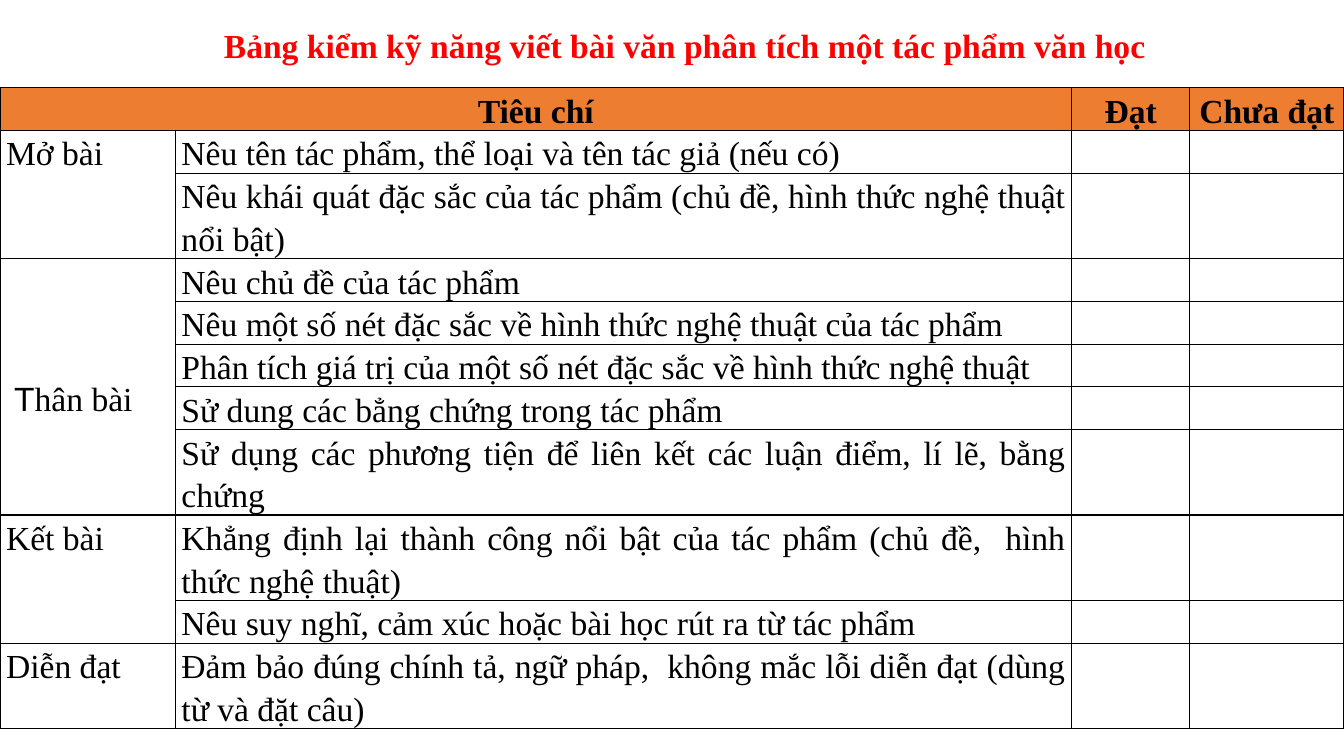
from dataclasses import dataclass

from lxml.etree import SubElement
from pptx import Presentation
from pptx.dml.color import RGBColor
from pptx.enum.text import MSO_ANCHOR, PP_ALIGN
from pptx.oxml.ns import qn
from pptx.util import Inches, Pt


@dataclass(frozen=True)
class Theme:
    """Colours, fonts and sizes of the slide."""
    title: RGBColor = RGBColor(0xFF, 0, 0)
    ink: RGBColor = RGBColor(0, 0, 0)
    header: RGBColor = RGBColor(0xED, 0x7D, 0x31)
    font: str = "Times New Roman"
    initial_font: str = "Arial"
    size: Pt = Pt(24)
    line_spacing: float = 1.15
    border: Pt = Pt(1)


THEME = Theme()
WIDTH, HEIGHT = 13.33, 7.5
LINE = 0.42
COLUMNS = [1.74, 8.89, 1.17, 1.53]
TITLE = "Bảng kiểm kỹ năng viết bài văn phân tích một tác phẩm văn học"
SECTIONS = [
    ("Mở bài", [
        ("Nêu tên tác phẩm, thể loại và tên tác giả (nếu có)", 1),
        ("Nêu khái quát đặc sắc của tác phẩm (chủ đề, hình thức nghệ thuật nổi bật)", 2),
    ]),
    ("Thân bài", [
        ("Nêu chủ đề của tác phẩm", 1),
        ("Nêu một số nét đặc sắc về hình thức nghệ thuật của tác phẩm", 1),
        ("Phân tích giá trị của một số nét đặc sắc về hình thức nghệ thuật", 1),
        ("Sử dung các bẳng chứng trong tác phẩm", 1),
        ("Sử dụng các phương tiện để liên kết các luận điểm, lí lẽ, bằng chứng", 2),
    ]),
    ("Kết bài", [
        ("Khẳng định lại thành công nổi bật của tác phẩm (chủ đề,  hình thức nghệ thuật)", 2),
        ("Nêu suy nghĩ, cảm xúc hoặc bài học rút ra từ tác phẩm", 1),
    ]),
    ("Diễn đạt", [
        ("Đảm bảo đúng chính tả, ngữ pháp,  không mắc lỗi diễn đạt (dùng từ và đặt câu)", 2),
    ]),
]


def write(frame, spans, align=PP_ALIGN.LEFT, bold=False, color=THEME.ink):
    """Write one paragraph of spans in the theme's type."""
    para = frame.paragraphs[0]
    para.alignment = align
    para.line_spacing = THEME.line_spacing
    para.font.name, para.font.size = THEME.font, THEME.size
    para.font.bold, para.font.color.rgb = bold, color
    for text in spans:
        para.add_run().text = text
    return para


def prepare_cell(cell, is_header):
    """Give a cell its margins, black borders and fill."""
    cell.margin_left = cell.margin_right = Inches(0.06)
    cell.margin_top = cell.margin_bottom = 0
    properties = cell._tc.get_or_add_tcPr()
    for side in ("lnL", "lnR", "lnT", "lnB"):
        line = SubElement(properties, qn(f"a:{side}"), w=str(THEME.border))
        fill = SubElement(line, qn("a:solidFill"))
        SubElement(fill, qn("a:srgbClr"), val=str(THEME.ink))
    if is_header:
        cell.fill.solid()
        cell.fill.fore_color.rgb = THEME.header
    else:
        cell.fill.background()


def add_title(page, left, top, width, height):
    """Place the centred red title."""
    box = page.shapes.add_textbox(*map(Inches, (left, top, width, height)))
    box.text_frame.word_wrap = True
    box.text_frame.margin_left = Inches(0.35)
    write(box.text_frame, [TITLE], PP_ALIGN.CENTER, True, THEME.title)


def add_checklist(page, left, top, width):
    """Place the checklist table with its merged section labels."""
    lines = [1] + [count for _, items in SECTIONS for _, count in items]
    table = page.shapes.add_table(
        len(lines), len(COLUMNS), Inches(left), Inches(top),
        Inches(width), Inches(LINE * sum(lines))).table
    table.first_row = table.horz_banding = False
    for column, share in zip(table.columns, COLUMNS):
        column.width = Inches(width * share / sum(COLUMNS))
    for index, (row, count) in enumerate(zip(table.rows, lines)):
        row.height = Inches(LINE * count)
        for cell in row.cells:
            prepare_cell(cell, index == 0)

    table.cell(0, 0).merge(table.cell(0, 1))
    for column, text in ((0, "Tiêu chí"), (2, "Đạt"), (3, "Chưa đạt")):
        write(table.cell(0, column).text_frame, [text], PP_ALIGN.CENTER, True)

    first = 1
    for label, items in SECTIONS:
        heading = table.cell(first, 0)
        if len(items) > 1:
            heading.merge(table.cell(first + len(items) - 1, 0))
        if label == "Thân bài":
            heading.vertical_anchor = MSO_ANCHOR.MIDDLE
            heading.margin_top, heading.margin_left = Inches(0.2), Inches(0.14)
            para = write(heading.text_frame, [label[0], label[1:]])
            para.runs[0].font.name = THEME.initial_font
        else:
            write(heading.text_frame, [label])
        for row, (text, _) in enumerate(items, first):
            write(table.cell(row, 1).text_frame, [text], PP_ALIGN.JUSTIFY)
        first += len(items)


def main():
    """Build and save the slide."""
    deck = Presentation()
    deck.slide_width, deck.slide_height = Inches(WIDTH), Inches(HEIGHT)
    page = deck.slides.add_slide(deck.slide_layouts[6])
    add_checklist(page, 0, 0.87, WIDTH)
    add_title(page, 1.1, 0.14, 11.13, 0.53)
    deck.save("out.pptx")


if __name__ == "__main__":
    main()
